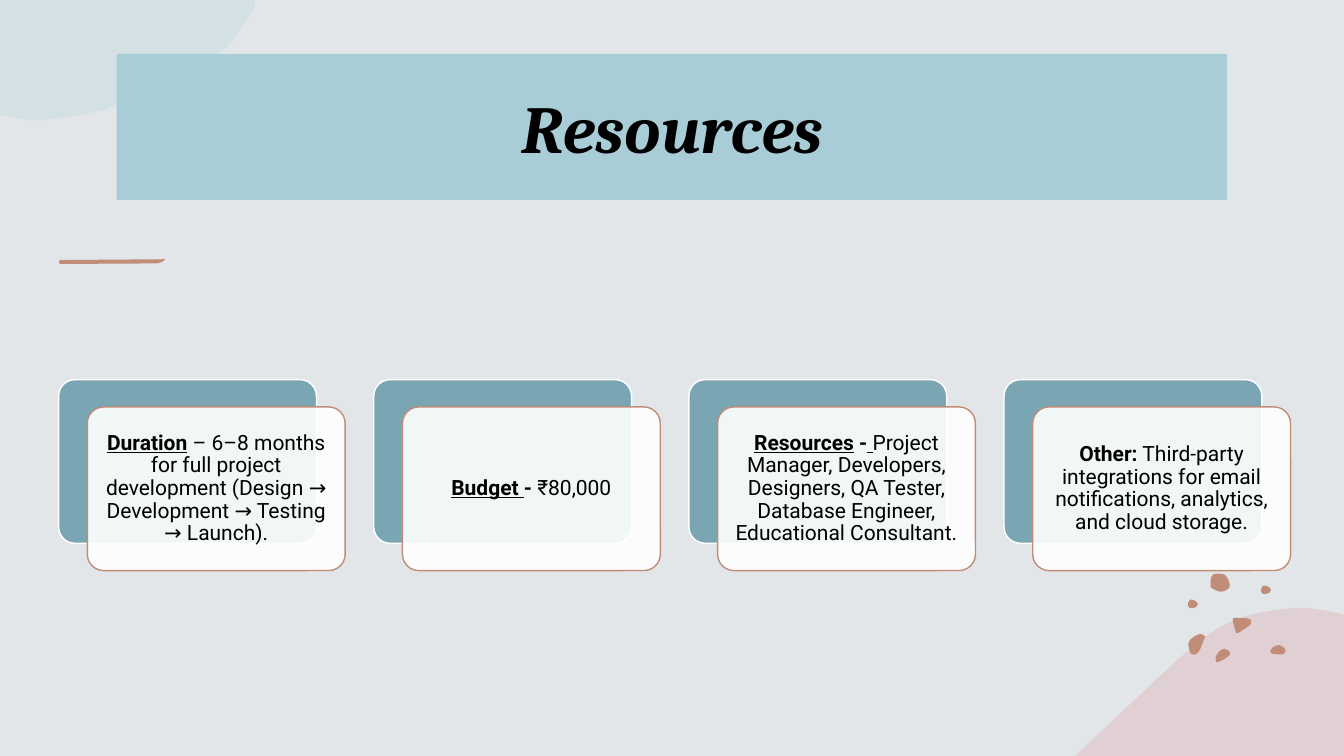
from dataclasses import dataclass
from typing import Any

from lxml.etree import SubElement
from pptx import Presentation
from pptx.dml.color import RGBColor
from pptx.enum.shapes import MSO_AUTO_SHAPE_TYPE as ShapeType
from pptx.enum.text import MSO_ANCHOR as Anchor, PP_ALIGN as Align
from pptx.oxml.ns import qn
from pptx.util import Pt

Point = tuple[float, float]

COLORS = {
    "background": "E2E6E8", "banner": "A9CDD7", "card": "7AA6B4", "clay": "C18C78",
    "rose": "E0BCC2", "mist": "C6DEE4", "white": "FFFFFF", "black": "000000",
}


@dataclass(frozen=True)
class Outline:
    """A smooth curve; corners, if any, close it with straight edges."""
    color: str
    curve: list[Point]
    corners: tuple[Point, ...] = ()
    opacity: int = 100


@dataclass(frozen=True)
class Piece:
    text: str
    bold: bool = False
    underline: bool = False


@dataclass(frozen=True)
class Box:
    left: float
    top: float
    width: float
    height: float


# Decorative outlines, in points
SMALL_PEBBLE = [(900.7, 421.9), (902.2, 418.3), (905.8, 419), (907.9, 421.2),
                (906.5, 423.4), (905, 424.1), (902.2, 424.1)]
PEBBLES = [
    [(873.4, 463.7), (877, 464.4), (878.4, 468), (869.8, 473), (868.3, 469.4),
     (871.2, 465.1)],
    [(857.5, 452.9), (860.4, 454.3), (860.4, 455.8), (856.1, 465.8), (851, 467.3),
     (848.9, 459.4), (852.5, 455)],
    [(913.7, 460.8), (918, 463.7), (916.6, 467.3), (907.9, 466.6), (908.6, 463)],
    [(864.7, 418.3), (865.4, 411.8), (869, 409.7), (875.5, 411.1), (878.4, 419),
     (872.6, 422.6), (866.2, 420.5)],
    SMALL_PEBBLE,
    [(x - 52.2, y + 10.1) for x, y in SMALL_PEBBLE],
    [(884.2, 441.4), (892.8, 442.1), (893.5, 445.7), (892.1, 447.1), (885.6, 451.4),
     (883.4, 452.2), (882.7, 451.4), (880.6, 443.5), (881.3, 441.4)],
]
BRUSH_STROKE = Outline("clay", [(117.9, 185.2), (116, 187), (112.5, 188.2)],
                       ((42.8, 188.6), (42.1, 187), (42.8, 185.8)))
ROSE_HILL = Outline("rose", [(768, 540), (805.9, 504.3), (841.7, 470.9), (865.9, 451.6),
                             (890.6, 439.9), (927.4, 434.2), (955.4, 437.8), (960, 439.2)],
                    ((960, 540),), 50)
MIST_CLOUD = Outline("mist", [(182.2, 4.3), (157.1, 38.3), (113.8, 61.9), (74.3, 78.4),
                              (29.5, 85.7), (9.4, 83.5), (0, 82.1)],
                     ((0, 0), (182.2, 0)), 50)
DECORATIONS = [ROSE_HILL, *(Outline("clay", pebble) for pebble in PEBBLES),
               MIST_CLOUD, BRUSH_STROKE]

# Slide content
BANNER = Box(83.4, 38.5, 793.2, 104.3)
FIRST_CARD = Box(41.9, 271.2, 184.2, 116.9)
CARD_PITCH = 225.1
FRONT_SHIFT = (20.5, 19.5)
CARDS = [
    [Piece("Duration", True, True), Piece(" ", True),
     Piece("– 6–8 months for full project development "
           "(Design → Development → Testing → Launch).")],
    [Piece("Budget ", True, True), Piece("- ", True), Piece("₹80,000")],
    [Piece("Resources", True, True), Piece(" -", True), Piece(" ", True, True),
     Piece("Project Manager, Developers, Designers, QA Tester, "
           "Database Engineer, Educational Consultant.")],
    [Piece("Other:", True),
     Piece(" Third-party integrations for email notifications, analytics, "
           "and cloud storage.")],
]
TITLE_FONT = {"name": "Cambria", "size": Pt(48), "bold": True, "italic": True}
CARD_FONT = {"name": "Roboto", "size": Pt(15)}
CARD_FRAME = {"word_wrap": True, "vertical_anchor": Anchor.MIDDLE,
              **{f"margin_{side}": Pt(4.5) for side in ("left", "top", "right", "bottom")}}


def set_format(target: Any, values: dict[str, Any]) -> None:
    for name, value in values.items():
        setattr(target, name, value)


def rgb(color: str) -> RGBColor:
    return RGBColor.from_string(COLORS[color])


def paint(shape: Any, fill: str, line: str | None = None, opacity: int = 100) -> None:
    shape.shadow.inherit = False
    shape.fill.solid()
    shape.fill.fore_color.rgb = rgb(fill)
    if opacity < 100:
        color_element = shape.fill._xPr.find(qn("a:solidFill"))[0]
        SubElement(color_element, qn("a:alpha"), val=str(opacity * 1000))
    if line is None:
        shape.line.fill.background()
    else:
        shape.line.color.rgb = rgb(line)
        shape.line.width = Pt(1)


def curve_segments(points: list[Point], closed: bool) -> list[tuple[Point, Point, Point]]:
    """Two handles and the end of each Bézier segment of a curve through the points."""
    count = len(points)

    def at(index: int) -> Point:
        return points[index % count if closed else min(max(index, 0), count - 1)]

    def handle(anchor: int, sign: int) -> Point:
        (x0, y0), (x, y), (x1, y1) = at(anchor - 1), at(anchor), at(anchor + 1)
        return x + sign * (x1 - x0) / 6, y + sign * (y1 - y0) / 6

    return [(handle(index, 1), handle(index + 1, -1), at(index + 1))
            for index in range(count if closed else count - 1)]


def draw_outline(slide: Any, outline: Outline) -> None:
    segments = curve_segments(outline.curve, closed=not outline.corners)
    ends = [end for _, _, end in segments] + list(outline.corners)
    start_x, start_y = outline.curve[0]
    builder = slide.shapes.build_freeform(Pt(start_x), Pt(start_y), scale=1.0)
    builder.add_line_segments([(Pt(x), Pt(y)) for x, y in ends], close=True)
    shape = builder.convert_to_shape()
    # Bend the straight segments that belong to the curve
    lines = list(shape._element.iter(qn("a:lnTo")))
    for line, segment in zip(lines, segments):
        line.remove(line[0])
        line.tag = qn("a:cubicBezTo")
        for x, y in segment:
            SubElement(line, qn("a:pt"), x=str(Pt(x) - shape.left), y=str(Pt(y) - shape.top))
    paint(shape, outline.color, opacity=outline.opacity)


def draw_box(slide: Any, kind: ShapeType, box: Box) -> Any:
    return slide.shapes.add_shape(kind, Pt(box.left), Pt(box.top),
                                  Pt(box.width), Pt(box.height))


def write(shape: Any, pieces: list[Piece], font: dict[str, Any],
          frame: dict[str, Any], spacing: float = 1.0) -> None:
    set_format(shape.text_frame, frame)
    paragraph = shape.text_frame.paragraphs[0]
    set_format(paragraph, {"alignment": Align.CENTER, "line_spacing": spacing})
    for piece in pieces:
        run = paragraph.add_run()
        run.text = piece.text
        set_format(run.font, {"bold": piece.bold, "underline": piece.underline, **font})
        run.font.color.rgb = rgb("black")


def draw_card(slide: Any, index: int, pieces: list[Piece]) -> None:
    left, top = FIRST_CARD.left + index * CARD_PITCH, FIRST_CARD.top
    size = FIRST_CARD.width, FIRST_CARD.height
    back = draw_box(slide, ShapeType.ROUNDED_RECTANGLE, Box(left, top, *size))
    front = draw_box(slide, ShapeType.ROUNDED_RECTANGLE,
                     Box(left + FRONT_SHIFT[0], top + FRONT_SHIFT[1], *size))
    for shape in (back, front):
        shape.adjustments[0] = 0.1
    paint(back, "card", "white")
    paint(front, "white", "clay", 90)
    write(front, pieces, CARD_FONT, CARD_FRAME, 0.9)


def main() -> None:
    presentation = Presentation()
    set_format(presentation, {"slide_width": Pt(960), "slide_height": Pt(540)})
    slide = presentation.slides.add_slide(presentation.slide_layouts[6])
    slide.background.fill.solid()
    slide.background.fill.fore_color.rgb = rgb("background")

    # Decorations
    for outline in DECORATIONS:
        draw_outline(slide, outline)

    # Title banner
    banner = draw_box(slide, ShapeType.RECTANGLE, BANNER)
    paint(banner, "banner")
    write(banner, [Piece("Resources")], TITLE_FONT, {"vertical_anchor": Anchor.MIDDLE})

    # Resource cards
    for index, pieces in enumerate(CARDS):
        draw_card(slide, index, pieces)

    presentation.save("out.pptx")


if __name__ == "__main__":
    main()
